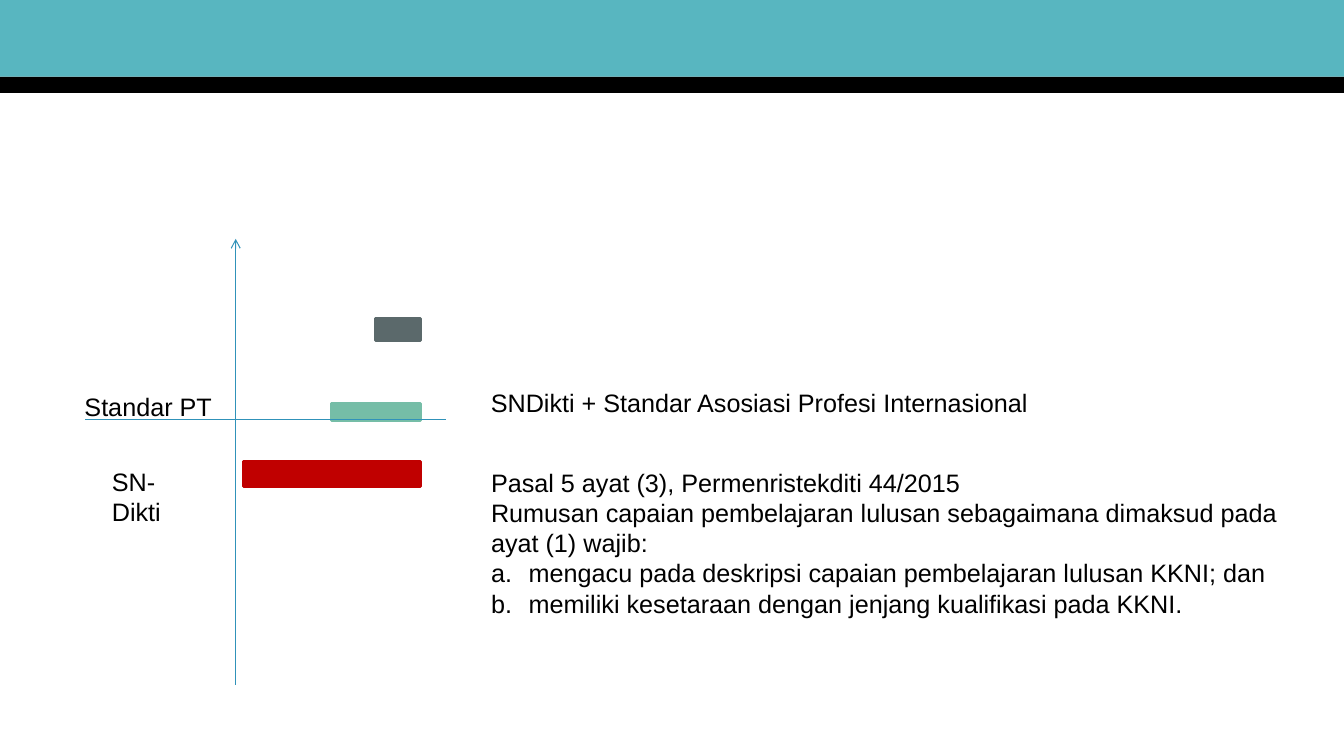
from dataclasses import dataclass

from lxml.etree import SubElement
from pptx import Presentation
from pptx.dml.color import RGBColor
from pptx.enum.shapes import MSO_CONNECTOR, MSO_SHAPE
from pptx.enum.text import MSO_ANCHOR, MSO_AUTO_SIZE
from pptx.oxml.ns import qn
from pptx.util import Cm, Pt


@dataclass(frozen=True)
class Theme:
    """Colours and type sizes of the slide."""
    teal: str = "58B6C0"
    black: str = "000000"
    red: str = "C00000"
    green: str = "75BDA7"
    slate: str = "5B696B"
    axis: str = "3092B9"
    font: str = "Arial"
    size: float = 18
    lead: float = 21.6


THEME = Theme()


def color(code):
    """Turn a hex code into a colour."""
    return RGBColor.from_string(code)


def add_bar(slide, box, fill, edge=0):
    """Add a plain filled bar, with an edge of the same colour if asked."""
    bar = slide.shapes.add_shape(MSO_SHAPE.RECTANGLE, *map(Cm, box))
    bar.shadow.inherit = False
    bar.fill.solid()
    bar.fill.fore_color.rgb = color(fill)
    if edge:
        bar.line.color.rgb = color(fill)
        bar.line.width = Pt(edge)
    else:
        bar.line.fill.background()


def add_axis(slide, start, end, arrow=False):
    """Add an axis line between two points."""
    axis = slide.shapes.add_connector(
        MSO_CONNECTOR.STRAIGHT, *map(Cm, start + end))
    axis.line.color.rgb = color(THEME.axis)
    axis.line.width = Pt(0.75)
    if arrow:
        SubElement(axis.line._get_or_add_ln(), qn("a:tailEnd"), type="arrow")
    SubElement(axis._element.spPr, qn("a:effectLst"))


def style(para):
    """Give a paragraph the type of the slide."""
    para.line_spacing = Pt(THEME.lead)
    para.space_before = Pt(0)
    para.font.name = THEME.font
    para.font.size = Pt(THEME.size)
    para.font.color.rgb = color(THEME.black)


def add_label(slide, box, text):
    """Add a short text in a box."""
    frame = slide.shapes.add_textbox(*map(Cm, box)).text_frame
    frame.word_wrap = True
    frame.text = text
    style(frame.paragraphs[0])


def add_header(slide, box):
    """Draw the teal band with the black strip below it."""
    left, top, width, height = box
    strip = 0.41
    add_bar(slide, (left, top + height - strip, width, strip), THEME.black)
    add_bar(slide, (left, top, width, height - strip), THEME.teal)


def add_chart(slide, box):
    """Draw the axes, the right-aligned bars and the level names."""
    left, top, width, height = box
    stem, base, edge = left + 3.81, top + 4.55, left + 8.46
    bars = ((5.61, 4.45, 0.64, THEME.red),
            (4.14, 2.24, 0.43, THEME.green),
            (2.01, 1.12, 0.56, THEME.slate))
    for drop, span, tall, fill in bars:
        add_bar(slide, (edge - span, top + drop, span, tall), fill, 2)
    add_label(slide, (left + 0.44, top + 5.61, 2.79, 1.02), "SN-Dikti")
    add_label(slide, (left - 0.25, top + 3.71, 3.8, 1.02), "Standar PT")
    add_axis(slide, (stem, top + height), (stem, top), arrow=True)
    add_axis(slide, (left + width, base), (left, base))


def add_rules(slide, box):
    """Write the standard and the rules that belong to it."""
    left, top, width, height = box
    drop = 2.01
    add_label(slide, (left, top, 17.45, 1.02),
              "SNDikti + Standar Asosiasi Profesi Internasional")
    body = slide.placeholders[1]
    body.left, body.top = Cm(left), Cm(top + drop)
    body.width, body.height = Cm(width), Cm(height - drop)
    frame = body.text_frame
    frame.word_wrap = True
    frame.auto_size = MSO_AUTO_SIZE.NONE
    frame.vertical_anchor = MSO_ANCHOR.TOP
    intro = (
        "Pasal 5 ayat (3), Permenristekditi 44/2015",
        "Rumusan capaian pembelajaran lulusan sebagaimana dimaksud pada "
        "ayat (1) wajib:")
    items = (
        "mengacu pada deskripsi capaian pembelajaran lulusan KKNI; dan",
        "memiliki kesetaraan dengan jenjang kualifikasi pada KKNI.")
    frame.text = "\n".join(intro + items)
    for rank, para in enumerate(frame.paragraphs):
        listed = rank >= len(intro)
        hang = Cm(0.95) if listed else 0
        props = para._p.get_or_add_pPr()
        props.set("marL", str(hang))
        props.set("indent", str(-hang))
        if listed:
            SubElement(props, qn("a:buFont"), typeface=THEME.font)
            SubElement(props, qn("a:buAutoNum"), type="alphaLcPeriod")
        else:
            SubElement(props, qn("a:buNone"))
        style(para)


def main():
    """Build the slide and save it."""
    deck = Presentation()
    deck.slide_width, deck.slide_height = Cm(33.87), Cm(19.05)
    slide = deck.slides.add_slide(deck.slide_layouts[1])
    title = slide.shapes.title._element
    title.getparent().remove(title)
    add_header(slide, (0, 0, 33.87, 2.34))
    add_chart(slide, (2.13, 6.02, 9.1, 11.23))
    add_rules(slide, (12.12, 9.63, 20.52, 6.88))
    deck.save("out.pptx")


if __name__ == "__main__":
    main()
